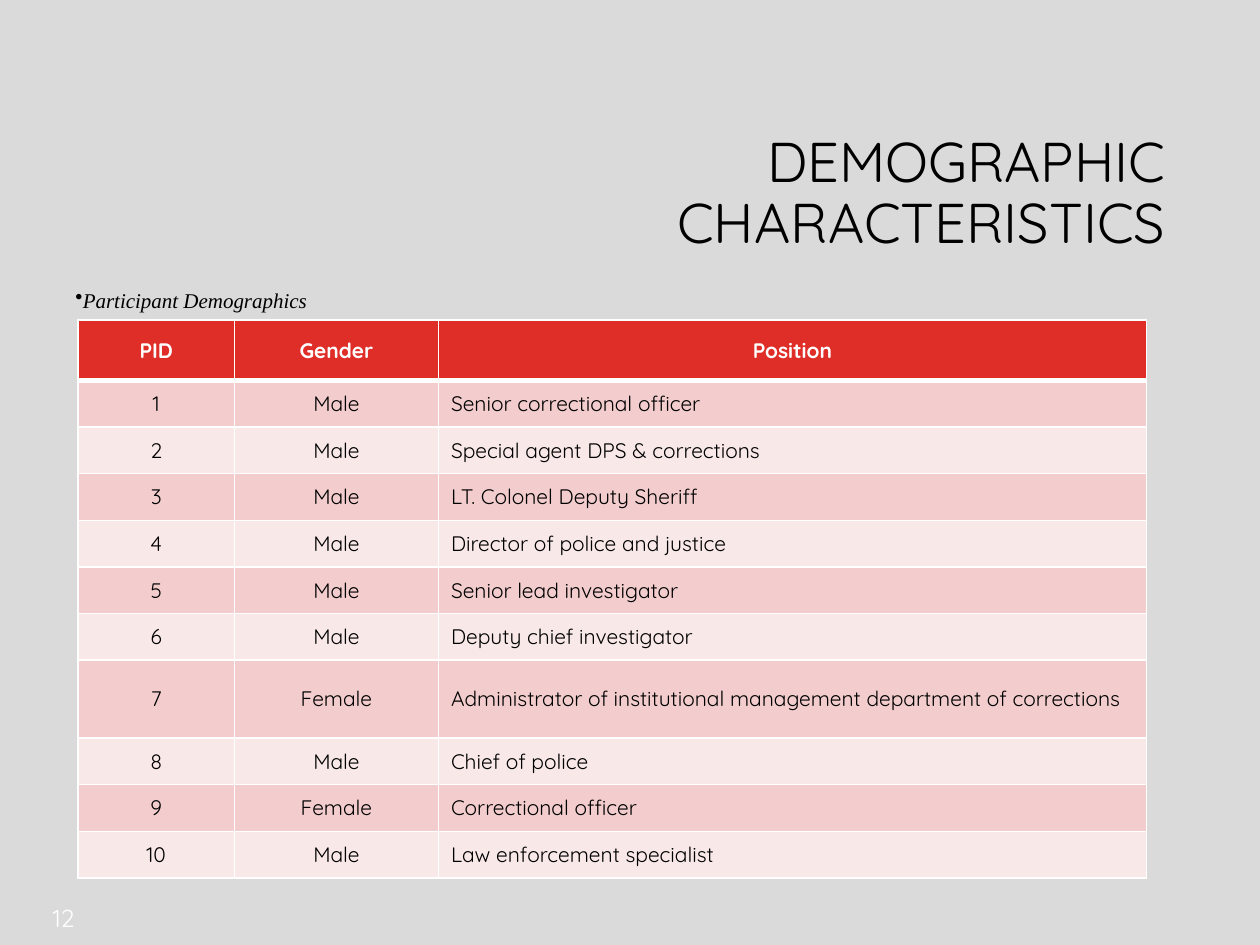
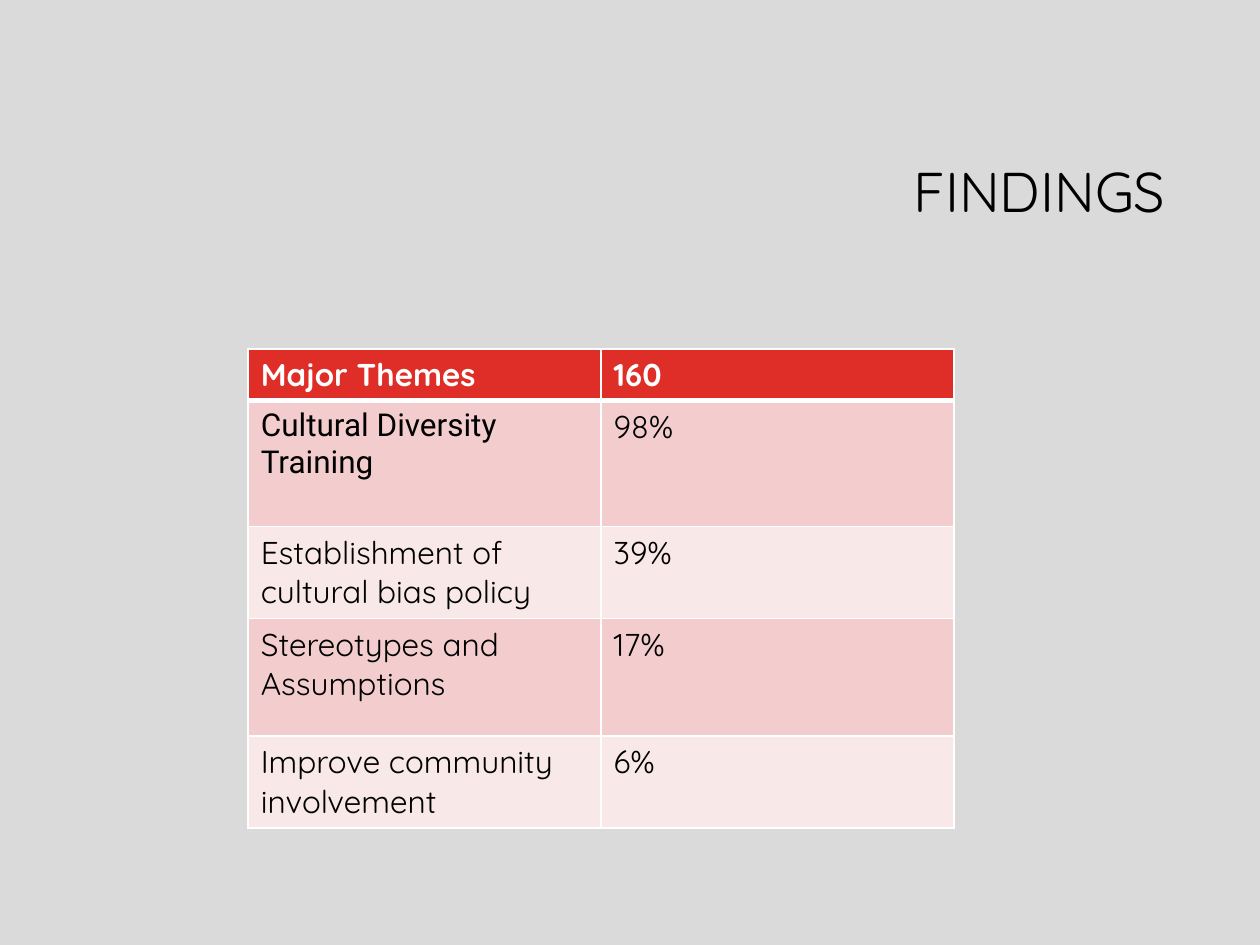
from dataclasses import dataclass

from lxml import etree
from pptx import Presentation
from pptx.dml.color import RGBColor
from pptx.enum.text import MSO_ANCHOR, PP_ALIGN
from pptx.oxml.ns import qn
from pptx.util import Inches, Pt

LEFT, CENTER, RIGHT = PP_ALIGN.LEFT, PP_ALIGN.CENTER, PP_ALIGN.RIGHT
TOP, MIDDLE = MSO_ANCHOR.TOP, MSO_ANCHOR.MIDDLE

PARTICIPANTS = [
    ("PID", "Gender", "Position"),
    ("1", "Male", "Senior correctional officer"),
    ("2", "Male", "Special agent DPS & corrections"),
    ("3", "Male", "LT. Colonel Deputy Sheriff"),
    ("4", "Male", "Director of police and justice"),
    ("5", "Male", "Senior lead investigator"),
    ("6", "Male", "Deputy chief investigator"),
    ("7", "Female", "Administrator of institutional management department of corrections"),
    ("8", "Male", "Chief of police"),
    ("9", "Female", "Correctional officer"),
    ("10", "Male", "Law enforcement specialist"),
]
THEMES = [
    ("Major Themes", "160"),
    ("Cultural Diversity Training", "98%"),
    ("Establishment of cultural bias policy", "39%"),
    ("Stereotypes and Assumptions", "17%"),
    ("Improve community involvement", "6%"),
]
PAGES = [
    dict(
        title="DEMOGRAPHIC CHARACTERISTICS",
        number="12",
        caption="Participant Demographics",
        table=dict(
            rows=PARTICIPANTS, at=(0.62, 2.54), columns=(1.24, 1.62, 5.62),
            heights=[0.48] + 6 * [0.37] + [0.62] + 3 * [0.37],
            aligns=(CENTER, CENTER, LEFT), anchor=MIDDLE, size=12,
        ),
    ),
    dict(
        title="FINDINGS",
        table=dict(
            rows=THEMES, at=(1.97, 2.77), columns=(2.8, 2.8),
            heights=(0.41, 1.0, 0.73, 0.93, 0.73),
            aligns=(LEFT, LEFT), anchor=TOP, size=18,
            fonts={(1, 0): "Roboto"},
        ),
    ),
]


@dataclass(frozen=True)
class Theme:
    background: str = "DADADA"
    ink: str = "000000"
    light: str = "FFFFFF"
    header: str = "DF2E28"
    bands: tuple = ("F3CDCD", "F9E8E8")
    font: str = "Quicksand"
    caption_font: str = "Times New Roman"
    title_size: int = 32
    number_size: int = 14
    caption_size: int = 12
    thin: int = 1
    thick: int = 3


THEME = Theme()
TITLE_AREA = (2.38, 0.84, 6.97, 1.41)
NUMBER_AREA = (0.17, 7.12, 0.67, 0.4)
CAPTION_AREA = (0.5, 2.23, 3, 0.91)


def write(frame, text, size, color=THEME.ink, font=THEME.font, align=LEFT,
          bold=False, italic=False, spacing=None, bullet=None):
    para = frame.paragraphs[0]
    para.alignment = align
    if spacing:
        para.line_spacing = spacing
    if bullet:
        properties = para._p.get_or_add_pPr()
        etree.SubElement(properties, qn("a:buChar"), char=bullet)
    span = para.add_run()
    span.text = text
    span.font.name = font
    span.font.size = Pt(size)
    span.font.bold = bold
    span.font.italic = italic
    span.font.color.rgb = RGBColor.from_string(color)


def add_text(page, area, text, size, anchor=TOP, **style):
    box = page.shapes.add_textbox(*map(Inches, area))
    box.text_frame.word_wrap = True
    box.text_frame.vertical_anchor = anchor
    write(box.text_frame, text, size, **style)


def add_borders(cell, top, bottom):
    properties = cell._tc.get_or_add_tcPr()
    for side, width in zip("LRTB", (THEME.thin, THEME.thin, top, bottom)):
        line = etree.SubElement(properties, qn(f"a:ln{side}"), w=str(Pt(width)))
        fill = etree.SubElement(line, qn("a:solidFill"))
        etree.SubElement(fill, qn("a:srgbClr"), val=THEME.light)


def add_table(page, rows, at, columns, heights, aligns, anchor, size, fonts={}):
    area = (*at, sum(columns), sum(heights))
    table = page.shapes.add_table(len(rows), len(columns), *map(Inches, area)).table
    for column, width in zip(table.columns, columns):
        column.width = Inches(width)
    for index, (row, height) in enumerate(zip(rows, heights)):
        table.rows[index].height = Inches(height)
        heading = index == 0
        fill = THEME.header if heading else THEME.bands[(index - 1) % 2]
        top = THEME.thick if index == 1 else THEME.thin
        bottom = THEME.thick if heading else THEME.thin
        for place, text in enumerate(row):
            cell = table.cell(index, place)
            add_borders(cell, top, bottom)
            cell.fill.solid()
            cell.fill.fore_color.rgb = RGBColor.from_string(fill)
            cell.vertical_anchor = anchor
            write(cell.text_frame, text, size, bold=heading,
                  color=THEME.light if heading else THEME.ink,
                  font=fonts.get((index, place), THEME.font),
                  align=CENTER if heading and anchor == MIDDLE else aligns[place])


def add_page(deck, title, table, number=None, caption=None):
    page = deck.slides.add_slide(deck.slide_layouts[6])
    page.background.fill.solid()
    page.background.fill.fore_color.rgb = RGBColor.from_string(THEME.background)
    if number:
        add_text(page, NUMBER_AREA, number, THEME.number_size,
                 color=THEME.light, align=CENTER)
    add_text(page, TITLE_AREA, title, THEME.title_size,
             anchor=MIDDLE, align=RIGHT, spacing=0.9)
    add_table(page, **table)
    if caption:
        add_text(page, CAPTION_AREA, caption, THEME.caption_size,
                 font=THEME.caption_font, italic=True, bullet="•")


def main():
    deck = Presentation()
    deck.slide_width, deck.slide_height = Inches(10), Inches(7.5)
    for content in PAGES:
        add_page(deck, **content)
    deck.save("out.pptx")


if __name__ == "__main__":
    main()
